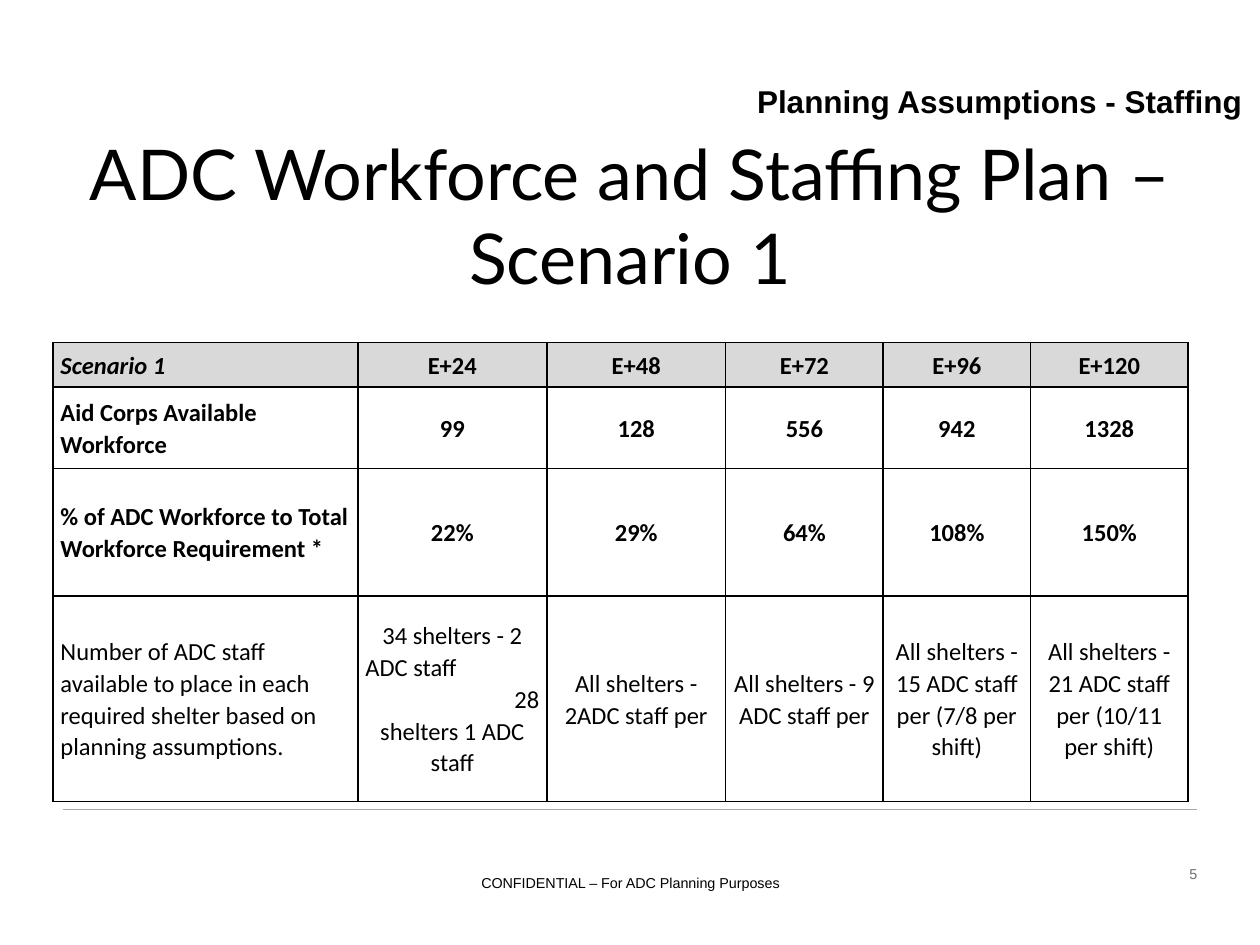
from lxml.etree import SubElement
from pptx import Presentation
from pptx.dml.color import RGBColor
from pptx.enum.shapes import MSO_CONNECTOR
from pptx.enum.text import MSO_ANCHOR, PP_ALIGN
from pptx.oxml.ns import qn
from pptx.util import Inches, Pt

ALIGN = {"l": PP_ALIGN.LEFT, "c": PP_ALIGN.CENTER, "r": PP_ALIGN.RIGHT}


def color(hex_code):
    return RGBColor.from_string(hex_code)


def write(tf, text, size=14, font="Calibri", fill="000000", bold=False,
          italic=False, align="l", spacing=None, anchor=MSO_ANCHOR.TOP, wrap=True):
    tf.word_wrap = wrap
    tf.vertical_anchor = anchor
    lines = [(text, align)] if isinstance(text, str) else text
    for i, (line, side) in enumerate(lines):
        p = tf.add_paragraph() if i else tf.paragraphs[0]
        p.alignment = ALIGN[side]
        p.line_spacing = spacing
        r = p.add_run()
        r.text = line
        r.font.size, r.font.name = Pt(size), font
        r.font.bold, r.font.italic = bold, italic
        r.font.color.rgb = color(fill)


prs = Presentation()
prs.slide_width, prs.slide_height = Inches(10), Inches(7.5)
W, H = prs.slide_width, prs.slide_height
s = prs.slides.add_slide(prs.slide_layouts[6])

rule_y = int(H * 0.857)
rule = s.shapes.add_connector(MSO_CONNECTOR.STRAIGHT, int(W * 0.95), rule_y,
                              int(W * 0.05), rule_y)
rule.line.color.rgb = color("A6A6A6")
rule.line.width = Pt(0.75)
SubElement(rule._element.spPr, qn("a:effectLst"))

boxes = [
    ((0.5, 1.08, 9, 1.25), "ADC Workforce and Staffing Plan – Scenario 1",
     dict(size=40, font="Lato", align="c", anchor=MSO_ANCHOR.MIDDLE)),
    ((2.69, 6.89, 4.63, 0.27), "CONFIDENTIAL – For ADC Planning Purposes",
     dict(size=8.2, font="Arial", align="c")),
    ((8.93, 6.82, 0.67, 0.2), "5",
     dict(size=8.2, font="Arial", fill="6D6E70", align="r")),
    ((5.91, 0.6, 4.09, 0.4), "Planning Assumptions - Staffing",
     dict(size=18, font="Arial", bold=True, wrap=False)),
]
for place, text, style in boxes:
    sp = s.shapes.add_textbox(*map(Inches, place))
    write(sp.text_frame, text, **style)

cols = [2.42, 1.5, 1.42, 1.25, 1.17, 1.25]
rows = [0.35, 0.65, 1.01, 1.63]
shelters = [("34 shelters - 2", "c"), ("ADC staff", "l"), ("28", "r"),
            ("shelters 1 ADC staff", "c")]
data = [
    ["Scenario 1", "E+24", "E+48", "E+72", "E+96", "E+120"],
    ["Aid Corps Available Workforce", "99", "128", "556", "942", "1328"],
    ["% of ADC Workforce to Total Workforce Requirement *",
     "22%", "29%", "64%", "108%", "150%"],
    ["Number of ADC staff available to place in each required shelter "
     "based on planning assumptions.",
     shelters, "All shelters - 2ADC staff per", "All shelters - 9 ADC staff per",
     "All shelters - 15 ADC staff per (7/8 per shift)",
     "All shelters - 21 ADC staff per (10/11 per shift)"],
]
table = s.shapes.add_table(len(rows), len(cols), Inches(0.42), Inches(2.72),
                           Inches(sum(cols)), Inches(sum(rows))).table
table.first_row = table.horz_banding = False
for column, width in zip(table.columns, cols):
    column.width = Inches(width)
for row, height in zip(table.rows, rows):
    row.height = Inches(height)

for i, values in enumerate(data):
    for j, value in enumerate(values):
        cell = table.cell(i, j)
        cell.margin_left = cell.margin_right = Inches(0.06)
        cell.margin_top = cell.margin_bottom = 0
        cell.vertical_anchor = MSO_ANCHOR.MIDDLE
        for side in ("lnL", "lnR", "lnT", "lnB"):
            ln = SubElement(cell._tc.get_or_add_tcPr(), qn(f"a:{side}"), w=str(Pt(1)))
            SubElement(SubElement(ln, qn("a:solidFill")), qn("a:srgbClr"), val="000000")
        if i == 0:
            cell.fill.solid()
            cell.fill.fore_color.rgb = color("D9D9D9")
        else:
            cell.fill.background()
        write(cell.text_frame, value, bold=i < 3, italic=i == j == 0,
              align="c" if j else "l", spacing=1.07, anchor=MSO_ANCHOR.MIDDLE)

prs.save("out.pptx")
